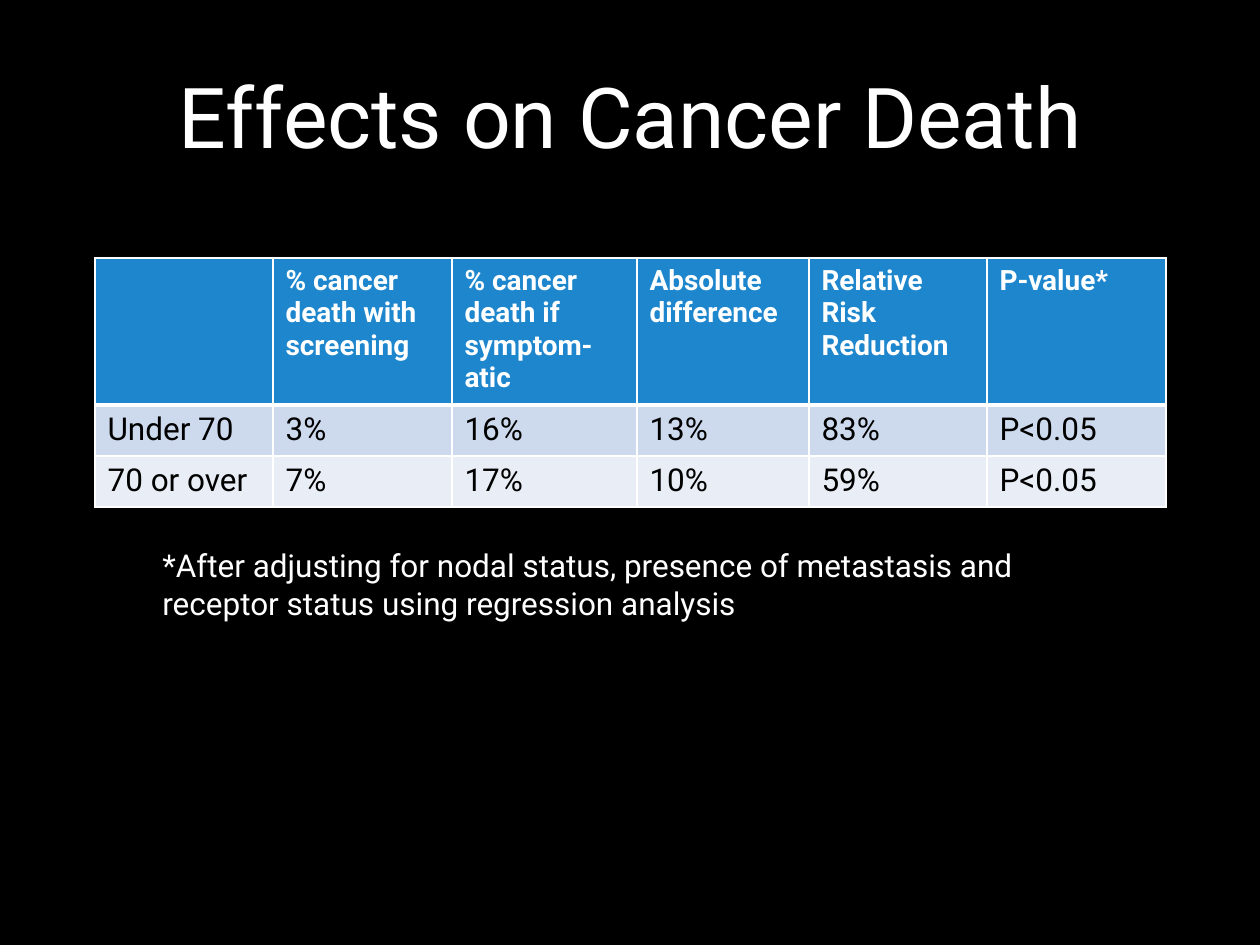
from lxml import etree
from pptx import Presentation
from pptx.dml.color import RGBColor
from pptx.enum.text import MSO_ANCHOR, PP_ALIGN
from pptx.oxml.ns import qn
from pptx.util import Pt

MIDDLE = MSO_ANCHOR.MIDDLE
LEFT, CENTER = PP_ALIGN.LEFT, PP_ALIGN.CENTER

# Content
TITLE = "Effects on Cancer Death"
ROWS = [
    ["", "% cancer death with screening", "% cancer death if symptom-atic",
     "Absolute difference", "Relative Risk Reduction", "P-value*"],
    ["Under 70", "3%", "16%", "13%", "83%", "P<0.05"],
    ["70 or over", "7%", "17%", "10%", "59%", "P<0.05"],
]
FOOTNOTE = ("*After adjusting for nodal status, presence of metastasis and "
            "receptor status using regression analysis")

# Style
FONT = "Roboto"
BLACK = RGBColor(0x00, 0x00, 0x00)
WHITE = RGBColor(0xFF, 0xFF, 0xFF)
BLUE = RGBColor(0x1D, 0x86, 0xCD)
BAND_DARK = RGBColor(0xCD, 0xD9, 0xED)
BAND_LIGHT = RGBColor(0xE8, 0xED, 0xF6)

# Geometry in px, 126 to the inch
EMU_PER_PX = 914400 / 126
COL_WIDTHS = [178, 179, 185, 172, 178, 179]
ROW_HEIGHTS = [142, 51, 51]
# fill, text colour, size, bold, top and bottom border width in points
ROW_STYLES = [
    (BLUE, WHITE, 16, True, 1, 3),
    (BAND_DARK, BLACK, 18, False, 3, 1),
    (BAND_LIGHT, BLACK, 18, False, 1, 1),
]


def px(n):
    return round(n * EMU_PER_PX)


def style_font(font, size, color, bold=False):
    font.name = FONT
    font.size = Pt(size)
    font.bold = bold
    font.color.rgb = color


def add_text(slide, box, text, size, align=LEFT, anchor=None):
    tf = slide.shapes.add_textbox(*map(px, box)).text_frame
    tf.word_wrap = True
    tf.vertical_anchor = anchor
    tf.text = text
    p = tf.paragraphs[0]
    p.alignment = align
    style_font(p.runs[0].font, size, WHITE)


def add_border(cell, side, width):
    ln = etree.SubElement(cell._tc.get_or_add_tcPr(), qn(f"a:ln{side}"),
                          w=str(Pt(width)))
    fill = etree.SubElement(ln, qn("a:solidFill"))
    etree.SubElement(fill, qn("a:srgbClr"), val=str(WHITE))


def style_cell(cell, text, style):
    fill, color, size, bold, top, bottom = style
    cell.text = text
    style_font(cell.text_frame.paragraphs[0].font, size, color, bold)
    for run in cell.text_frame.paragraphs[0].runs:
        style_font(run.font, size, color, bold)
    # Borders come before the fill in the cell properties
    for side, width in zip("LRTB", (1, 1, top, bottom)):
        add_border(cell, side, width)
    cell.fill.solid()
    cell.fill.fore_color.rgb = fill


prs = Presentation()
prs.slide_width, prs.slide_height = px(1260), px(945)
s = prs.slides.add_slide(prs.slide_layouts[6])
s.background.fill.solid()
s.background.fill.fore_color.rgb = BLACK

# Title
add_text(s, (95, 17, 1071, 196), TITLE, 48, CENTER, MIDDLE)

# Results table
table = s.shapes.add_table(
    len(ROWS), len(COL_WIDTHS), px(95), px(258),
    px(sum(COL_WIDTHS)), px(sum(ROW_HEIGHTS))).table
for column, width in zip(table.columns, COL_WIDTHS):
    column.width = px(width)
for row, height, texts, style in zip(table.rows, ROW_HEIGHTS, ROWS, ROW_STYLES):
    row.height = px(height)
    for cell, text in zip(row.cells, texts):
        style_cell(cell, text, style)

# Footnote
add_text(s, (150, 540, 959, 89), FOOTNOTE, 18)

prs.save("out.pptx")
